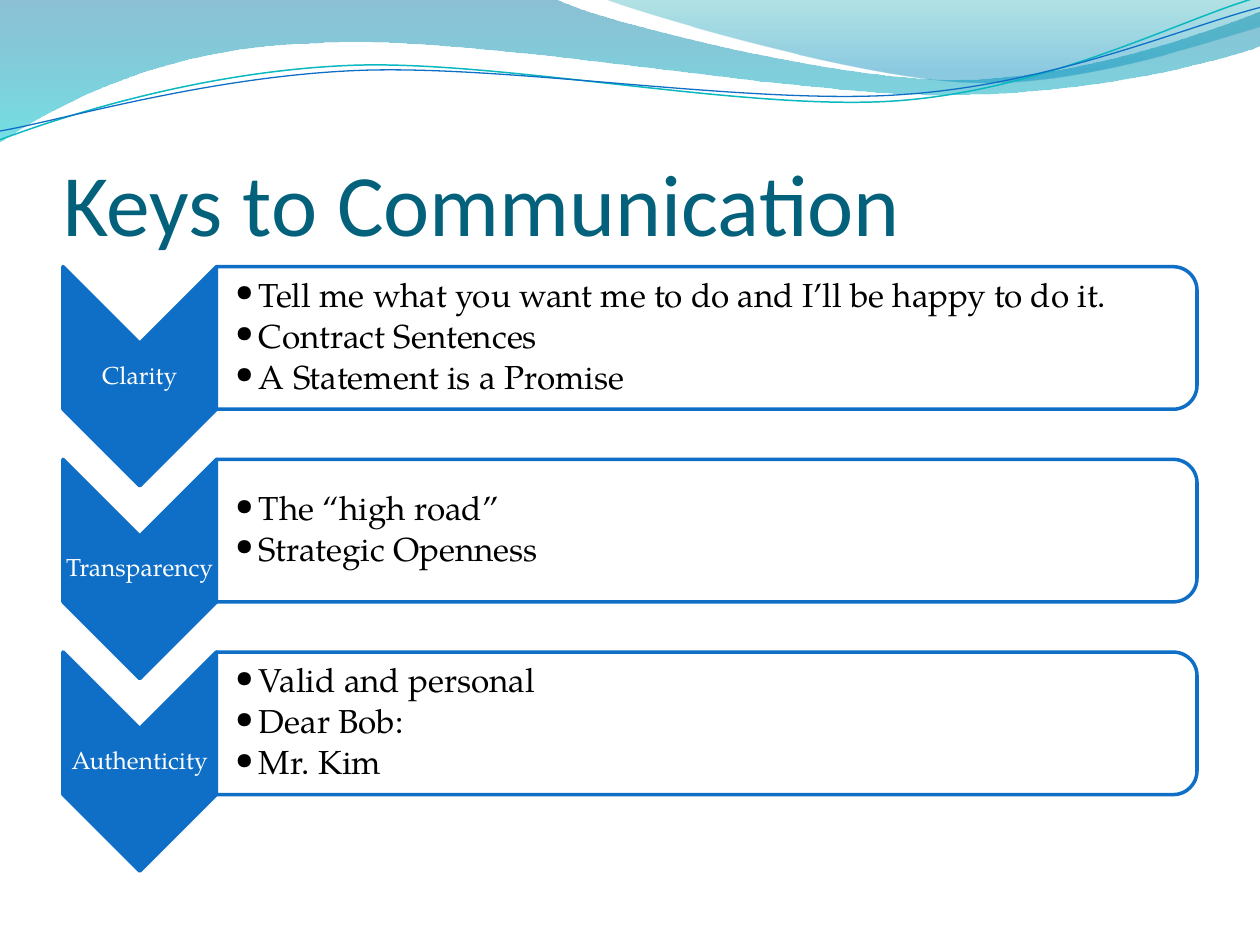
from math import cos, radians, sin

from lxml import etree
from pptx import Presentation
from pptx.dml.color import RGBColor
from pptx.enum.shapes import MSO_SHAPE
from pptx.enum.text import MSO_ANCHOR, PP_ALIGN
from pptx.oxml.ns import qn
from pptx.util import Pt

CHEVRON, BAR = MSO_SHAPE.CHEVRON, MSO_SHAPE.ROUND_2_SAME_RECTANGLE
MIDDLE, BOTTOM = MSO_ANCHOR.MIDDLE, MSO_ANCHOR.BOTTOM
LEFT, CENTER = PP_ALIGN.LEFT, PP_ALIGN.CENTER
BLUE = RGBColor(0x0F, 0x6F, 0xC6)
TEAL = RGBColor(0x0A, 0xB8, 0xBF)
NAVY = RGBColor(0x04, 0x61, 0x7B)
WHITE = RGBColor(0xFF, 0xFF, 0xFF)
BLACK = RGBColor(0, 0, 0)
SEA = RGBColor(0x00, 0x74, 0xA1)
AQUA = RGBColor(0x00, 0xC6, 0xCF)
JADE = RGBColor(0x00, 0xA1, 0xA9)
SKY = RGBColor(0x00, 0x8B, 0xBF)
SERIF, SANS = "TeX Gyre Pagella", "Calibri"
TILT = 2.7

BAND = [(0, 0), (4.4, -0.01), (4.76, 0.17, 6.64, 0.63, 7.58, 0.63),
        (8.53, 0.63, 9.58, 0.26, 10, 0.09), (10.01, 0.36),
        (9.83, 0.44, 8.7, 0.76, 7.46, 0.75), (6.22, 0.75, 3.82, 0.28, 2.57, 0.34),
        (1.29, 0.36, 0.46, 0.83, -0.01, 1.13), (0, 0)]
CREST = [(4.79, -0.01), (5.09, 0.11, 6.82, 0.62, 7.69, 0.65),
         (8.56, 0.69, 9.61, 0.32, 10, 0.21), (10, 0), (4.79, -0.01)]
UPPER = [(0, 1.11), (0.48, 0.93, 1.58, 0.57, 2.77, 0.52),
         (3.95, 0.47, 5.93, 0.89, 7.13, 0.8), (8.33, 0.71, 9.38, 0.15, 9.98, -0.02)]
LOWER = [(0, 1.04), (0.47, 0.96, 1.64, 0.61, 2.83, 0.56),
         (4.03, 0.51, 5.97, 0.84, 7.17, 0.75), (8.36, 0.67, 9.41, 0.21, 10, 0.06)]
ROWS = [
    ("Clarity", ["Tell me what you want me to do and I’ll be happy to do it.",
                 "Contract Sentences", "A Statement is a Promise"]),
    ("Transparency", ["The “high road”", "Strategic Openness"]),
    ("Authenticity", ["Valid and personal", "Dear Bob:", "Mr. Kim"]),
]


def tilt(x, y, mid):
    """Turn a point about the middle of the slide's width."""
    c, s = cos(radians(TILT)), sin(radians(TILT))
    return 360 + (x - 360) * c - (y - mid) * s, mid + (x - 360) * s + (y - mid) * c


def outline(slide, steps, close, mid=None):
    """Draw a freeform from steps in inches: a pair is a line, six numbers a curve."""
    spots = [(step[k] * 72, step[k + 1] * 72)
             for step in steps for k in range(0, len(step), 2)]
    if mid is not None:
        spots = [tilt(x, y, mid) for x, y in spots]
    grid = [(round(x * 100), round(y * 100)) for x, y in spots]
    pen = slide.shapes.build_freeform(*grid[0], scale=Pt(1) / 100)
    pen.add_line_segments(grid[1:], close=close)
    shape = pen.convert_to_shape()
    shape.shadow.inherit = False
    lines = iter(list(shape.element.iter(qn("a:lnTo"))))
    for step in steps[1:]:
        first = next(lines)
        if len(step) == 6:
            curve = etree.Element(qn("a:cubicBezTo"))
            first.addprevious(curve)
            for line in (first, next(lines), next(lines)):
                curve.append(line[0])
                line.getparent().remove(line)
    return shape


def fade(shape, *shares):
    """Set the opacity of the first colours of a shape, in percent."""
    for tone, share in zip(list(shape.element.iter(qn("a:srgbClr"))), shares):
        etree.SubElement(tone, qn("a:alpha"), val=str(share * 1000))


def wave(slide, steps, stops):
    """Fill a wave with a see-through gradient running downwards."""
    shape = outline(slide, steps, True)
    shape.line.fill.background()
    shape.fill.gradient()
    shape.fill.gradient_angle = 270
    for stop, (place, tone, _) in zip(shape.fill.gradient_stops, stops):
        stop.position, stop.color.rgb = place, tone
    fade(shape, *(share for _, _, share in stops))


def thread(slide, steps, mid, tone, width):
    """Draw a thin wave line as a tilted open freeform."""
    shape = outline(slide, steps, False, mid)
    shape.rotation = 360 - TILT
    shape.fill.background()
    shape.line.color.rgb, shape.line.width = tone, Pt(width)


def header(slide):
    """Draw the waves along the top of the slide."""
    wave(slide, BAND, [(0, SEA, 45), (1, AQUA, 55)])
    wave(slide, CREST, [(0, JADE, 30), (0.8, SKY, 45)])
    thread(slide, UPPER, 41.4, TEAL, 0.85)
    thread(slide, LOWER, 42.5, BLUE, 0.75)


def setup(frame, insets, anchor):
    """Set wrapping, insets and anchor of a text frame."""
    frame.word_wrap, frame.vertical_anchor = True, anchor
    (frame.margin_left, frame.margin_top,
     frame.margin_right, frame.margin_bottom) = map(Pt, insets)


def write(para, text, face, size, tone, align=LEFT):
    """Add one formatted run to a paragraph."""
    para.alignment = align
    run = para.add_run()
    run.text = text
    run.font.name, run.font.size, run.font.color.rgb = face, Pt(size), tone


def title(slide, text, x, y, w, h):
    """Place the slide title."""
    head = slide.shapes.title
    head.left, head.top, head.width, head.height = map(Pt, (x, y, w, h))
    setup(head.text_frame, (0, 3.6, 0, 0), BOTTOM)
    write(head.text_frame.paragraphs[0], text, SANS, 50, NAVY)


def turned(slide, kind, x, y, w, h, tone):
    """Add a preset turned by 90 degrees that fills the given box."""
    shape = slide.shapes.add_shape(
        kind, Pt(x + (w - h) / 2), Pt(y + (h - w) / 2), Pt(h), Pt(w))
    shape.rotation = 90
    shape.shadow.inherit = False
    shape.fill.solid()
    shape.fill.fore_color.rgb = tone
    shape.line.color.rgb, shape.line.width = BLUE, Pt(2)
    return shape


def block(slide, x, y, w, h, inset):
    """Add an empty text box and return its frame."""
    frame = slide.shapes.add_textbox(Pt(x), Pt(y), Pt(w), Pt(h)).text_frame
    setup(frame, (inset, 0.7, 0.7, 0.7), MIDDLE)
    return frame


def bullet(para):
    """Give a paragraph a hanging round bullet."""
    para.level = 1
    props = para._p.get_or_add_pPr()
    props.set("marL", str(Pt(13.5)))
    props.set("indent", str(Pt(-13.5)))
    etree.SubElement(props, qn("a:buFont"), typeface=SERIF)
    etree.SubElement(props, qn("a:buChar"), char="•")


def row(slide, label, lines, x, y, w, h):
    """Draw one chevron with its label and its bulleted bar."""
    side, tall = h * 0.7, h * 0.65
    turned(slide, CHEVRON, x, y, side, h, BLUE)
    para = block(slide, x, y + h * 0.35, side, h * 0.3, 0.7).paragraphs[0]
    para.line_spacing = 0.9
    write(para, label, SERIF, 14, WHITE, CENTER)
    fade(turned(slide, BAR, x + side, y, w - side, tall, WHITE), 90)
    frame = block(slide, x + side, y + 3.7, w - side - 4, tall - 8, 10.8)
    for i, line in enumerate(lines):
        para = frame.add_paragraph() if i else frame.paragraphs[0]
        para.line_spacing, para.space_after = 0.9, Pt(2.85)
        bullet(para)
        write(para, line, SERIF, 19, BLACK)


def main():
    """Build the slide and save it."""
    deck = Presentation()
    deck.slide_width, deck.slide_height = Pt(720), Pt(540)
    slide = deck.slides.add_slide(deck.slide_layouts[5])
    header(slide)
    title(slide, "Keys to Communication", 36, 55.1, 648, 90)
    for i, (label, lines) in enumerate(ROWS):
        row(slide, label, lines, 36, 152.4 + i * 110.1, 648, 125.3)
    deck.save("out.pptx")


if __name__ == "__main__":
    main()
